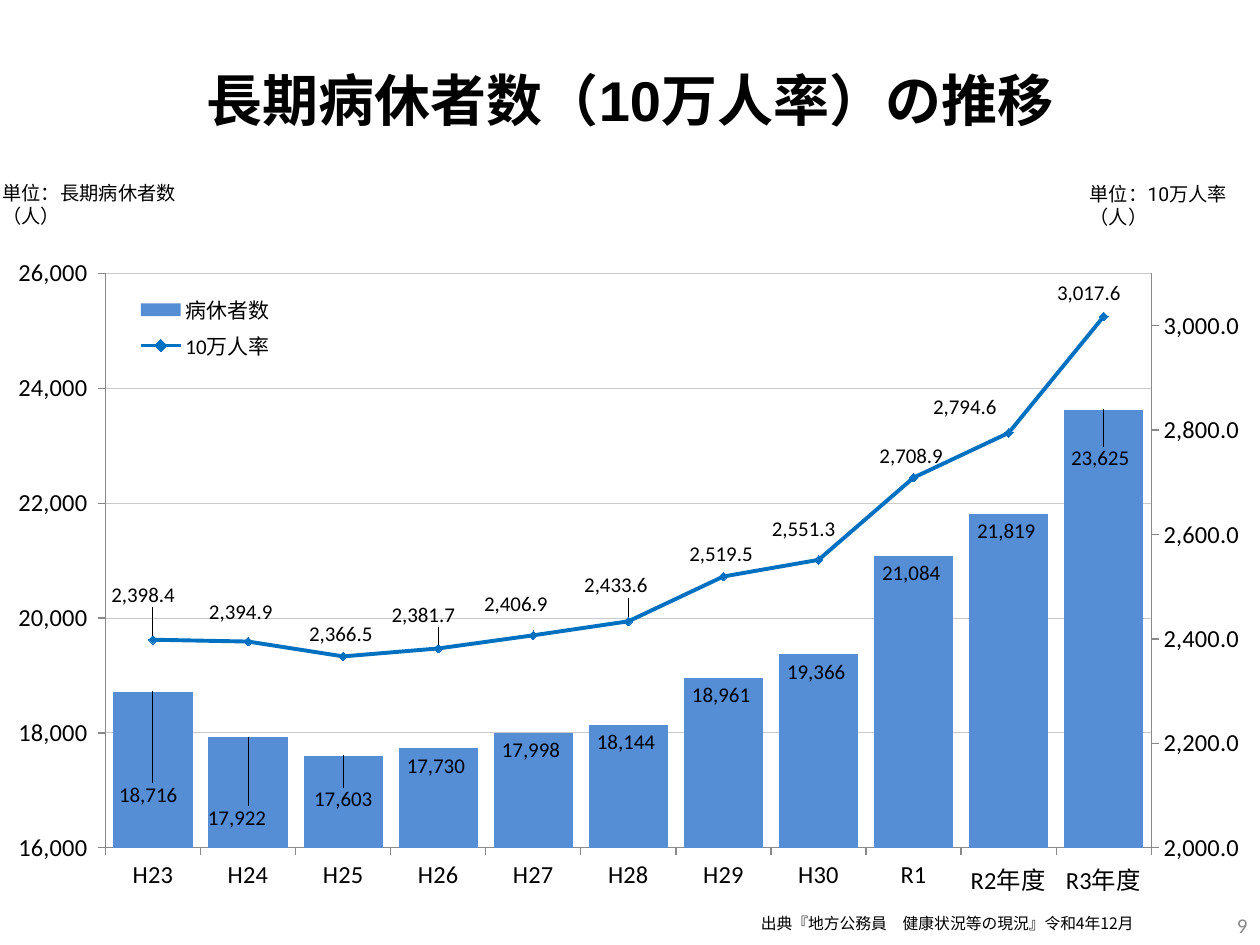
"""Build the slide on long-term sick leave numbers and rates."""
from dataclasses import dataclass

from lxml import etree
from pptx import Presentation
from pptx.chart.data import CategoryChartData
from pptx.dml.color import RGBColor
from pptx.enum.chart import (XL_CHART_TYPE, XL_LABEL_POSITION, XL_LEGEND_POSITION,
                             XL_MARKER_STYLE, XL_TICK_MARK)
from pptx.enum.text import MSO_ANCHOR, PP_ALIGN
from pptx.oxml import parse_xml
from pptx.oxml.ns import qn
from pptx.util import Inches, Pt

CENTER, LEFT, RIGHT = PP_ALIGN.CENTER, PP_ALIGN.LEFT, PP_ALIGN.RIGHT
TOP, MIDDLE = MSO_ANCHOR.TOP, MSO_ANCHOR.MIDDLE
COLUMN = XL_CHART_TYPE.COLUMN_CLUSTERED
INSIDE_END, ABOVE = XL_LABEL_POSITION.INSIDE_END, XL_LABEL_POSITION.ABOVE
LEGEND_RIGHT = XL_LEGEND_POSITION.RIGHT
DIAMOND = XL_MARKER_STYLE.DIAMOND
TICK_OUTSIDE, TICK_NONE = XL_TICK_MARK.OUTSIDE, XL_TICK_MARK.NONE

BLACK, GRAY, GRID, BAR_BLUE, LINE_BLUE = "000000", "898989", "C9C9C9", "558ED5", "0070C0"
CHART_BOX = (0.13, 1.62, 9.75, 5.53)
PLOT_BOX = (0.71, 0.55, 8.33, 4.56)
LEGEND_BOX = (0.87, 0.68, 1.27, 0.6)
CHART_NAMESPACE = "http://schemas.openxmlformats.org/drawingml/2006/chart"
DRAWING_NAMESPACE = "http://schemas.openxmlformats.org/drawingml/2006/main"
CATEGORIES = ("H23", "H24", "H25", "H26", "H27", "H28", "H29", "H30", "R1", "R2年度", "R3年度")
WHOLE, DECIMAL = "#,##0_ ", "#,##0.0_ "

SECOND_AXES = f"""<c:axes xmlns:c="{CHART_NAMESPACE}" xmlns:a="{DRAWING_NAMESPACE}">
<c:catAx><c:axId val="501"/><c:scaling><c:orientation val="minMax"/></c:scaling>
<c:delete val="1"/><c:axPos val="b"/><c:crossAx val="502"/><c:crosses val="autoZero"/></c:catAx>
<c:valAx><c:axId val="502"/><c:scaling><c:orientation val="minMax"/><c:max val="3100"/>
<c:min val="2000"/></c:scaling><c:delete val="0"/><c:axPos val="r"/>
<c:numFmt formatCode="{DECIMAL}" sourceLinked="0"/><c:majorTickMark val="out"/>
<c:minorTickMark val="none"/><c:tickLblPos val="nextTo"/>
<c:spPr><a:ln w="9525"><a:solidFill><a:srgbClr val="{GRAY}"/></a:solidFill></a:ln></c:spPr>
<c:txPr><a:bodyPr/><a:p><a:pPr><a:defRPr sz="1400"/></a:pPr></a:p></c:txPr>
<c:crossAx val="501"/><c:crosses val="max"/><c:crossBetween val="between"/>
<c:majorUnit val="200"/></c:valAx></c:axes>"""


@dataclass
class Caption:
    text: str
    box: tuple
    size: int
    font: str
    color: str = BLACK
    align: PP_ALIGN = LEFT
    anchor: MSO_ANCHOR = TOP
    bold: bool = False


@dataclass
class Measure:
    name: str
    values: tuple
    number_format: str
    position: XL_LABEL_POSITION
    label_shifts: dict


TITLE = Caption("長期病休者数（10万人率）の推移", (0, 0.28, 10, 1.02), 32, "Arial",
                align=CENTER, anchor=MIDDLE, bold=True)
CAPTIONS = (
    Caption("単位：10万人率（人）", (8.55, 1.4, 1.57, 0.29), 11, "Roboto"),
    Caption("単位：長期病休者数（人）", (-0.08, 1.39, 1.82, 0.29), 11, "Roboto"),
    Caption("出典『地方公務員　健康状況等の現況』令和4年12月", (5.94, 7.13, 3.37, 0.4), 9,
            "Noto Sans CJK JP", anchor=MIDDLE),
    Caption("9", (7.67, 7.14, 2.33, 0.4), 12, "Calibri", GRAY, RIGHT, MIDDLE),
)
PEOPLE = Measure(
    "病休者数",
    (18716, 17922, 17603, 17730, 17998, 18144, 18961, 19366, 21084, 21819, 23625),
    WHOLE, INSIDE_END,
    {0: (-0.02, 0.68), 1: (-0.07, 0.5), 2: (0.02, 0.21), 10: (-0.01, 0.25)})
RATE = Measure(
    "10万人率",
    (2398.4, 2394.9, 2366.5, 2381.7, 2406.9, 2433.6, 2519.5, 2551.3, 2708.9, 2794.6, 3017.6),
    DECIMAL, ABOVE,
    {0: (-0.06, -0.18), 1: (-0.04, -0.06), 3: (-0.1, -0.09), 4: (-0.12, -0.07),
     5: (-0.08, -0.11), 7: (-0.1, -0.07), 9: (-0.33, -0.03), 10: (-0.1, -0.01)})


def rgb(value: str) -> RGBColor:
    return RGBColor.from_string(value)


def apply(target, **values) -> None:
    for name, value in values.items():
        setattr(target, name, value)


def chart_element(parent, tag: str, value: str):
    return etree.SubElement(parent, qn(f"c:{tag}"), val=value)


def manual_layout(lengths: tuple, **modes):
    layout = parse_xml(f'<c:layout xmlns:c="{CHART_NAMESPACE}"><c:manualLayout/></c:layout>')
    for name, value in modes.items():
        chart_element(layout[0], name, value)
    for name, length, whole in zip("xywh", lengths, CHART_BOX[2:] * 2):
        chart_element(layout[0], name, str(length / whole))
    return layout


def remove_children(parent, tag: str) -> None:
    for child in parent.findall(qn(tag)):
        parent.remove(child)


def write_caption(shape, caption: Caption) -> None:
    left, top, width, height = map(Inches, caption.box)
    apply(shape, left=left, top=top, width=width, height=height)
    frame = shape.text_frame
    apply(frame, text=caption.text, word_wrap=True, vertical_anchor=caption.anchor)
    paragraph = frame.paragraphs[0]
    paragraph.alignment = caption.align
    font = paragraph.runs[0].font
    apply(font, size=Pt(caption.size), name=caption.font, bold=caption.bold)
    font.color.rgb = rgb(caption.color)


def label_series(series, measure: Measure) -> None:
    labels = series.data_labels
    apply(labels, show_value=True, number_format=measure.number_format,
          number_format_is_linked=False)
    point_labels = [series.points[index].data_label for index in measure.label_shifts]
    for label in (labels, *point_labels):
        label.position = measure.position
        label.font.size = Pt(12)
        label.font.color.rgb = rgb(BLACK)
    for element in series._element.iter(qn("c:dLbl")):
        index_element = element.find(qn("c:idx"))
        layout = manual_layout(measure.label_shifts[int(index_element.get("val"))])
        index_element.addnext(layout)
        layout.addnext(parse_xml(f'<c:numFmt xmlns:c="{CHART_NAMESPACE}" '
                                 f'formatCode="{measure.number_format}" sourceLinked="0"/>'))


def move_rate_to_line(chart) -> None:
    bar_plot = chart.plots[0]._element
    rate = bar_plot.findall(qn("c:ser"))[1]
    remove_children(rate, "c:invertIfNegative")
    line_plot = parse_xml(f'<c:lineChart xmlns:c="{CHART_NAMESPACE}"/>')
    chart_element(line_plot, "grouping", "standard")
    chart_element(line_plot, "varyColors", "0")
    line_plot.append(rate)
    chart_element(line_plot, "marker", "1")
    for axis_id in ("501", "502"):
        chart_element(line_plot, "axId", axis_id)
    bar_plot.addnext(line_plot)
    first_value_axis = chart.value_axis._element
    for axis in reversed(list(parse_xml(SECOND_AXES))):
        first_value_axis.addnext(axis)


def format_axes(chart) -> None:
    value_axis = chart.value_axis
    for axis in (chart.category_axis, value_axis):
        apply(axis, major_tick_mark=TICK_OUTSIDE, minor_tick_mark=TICK_NONE)
        axis.tick_labels.font.size = Pt(14)
        axis.format.line.color.rgb = rgb(GRAY)
        axis.format.line.width = Pt(0.75)
    apply(value_axis, minimum_scale=16000, maximum_scale=26000, major_unit=2000)
    apply(value_axis.tick_labels, number_format=WHOLE, number_format_is_linked=False)
    grid_line = value_axis.major_gridlines.format.line
    grid_line.color.rgb = rgb(GRID)
    grid_line.width = Pt(0.5)


def add_sick_leave_chart(slide) -> None:
    data = CategoryChartData()
    data.categories = CATEGORIES
    for measure in (PEOPLE, RATE):
        data.add_series(measure.name, measure.values, measure.number_format)
    chart = slide.shapes.add_chart(COLUMN, *map(Inches, CHART_BOX), data).chart
    apply(chart, has_title=False, has_legend=True)
    apply(chart.font, size=Pt(10), name="Calibri")
    chart.font.color.rgb = rgb(BLACK)
    format_axes(chart)
    move_rate_to_line(chart)
    bars, lines = chart.plots
    apply(bars, gap_width=20, overlap=-10, vary_by_categories=False)
    people, rate = bars.series[0], lines.series[0]
    apply(rate, smooth=False)
    apply(rate.format.line, width=Pt(2.25))
    apply(rate.marker, style=DIAMOND, size=5)
    rate.format.line.color.rgb = rate.marker.format.line.color.rgb = rgb(LINE_BLUE)
    for fill, color in ((people.format.fill, BAR_BLUE), (rate.marker.format.fill, LINE_BLUE)):
        fill.solid()
        fill.fore_color.rgb = rgb(color)
    label_series(people, PEOPLE)
    label_series(rate, RATE)
    legend = chart.legend
    apply(legend, position=LEGEND_RIGHT, include_in_layout=False)
    legend.font.size = Pt(12)
    remove_children(legend._element, "c:layout")
    legend._element.find(qn("c:legendPos")).addnext(
        manual_layout(LEGEND_BOX, xMode="edge", yMode="edge"))
    plot_area = bars._element.getparent()
    remove_children(plot_area, "c:layout")
    plot_area.insert(0, manual_layout(PLOT_BOX, layoutTarget="inner", xMode="edge", yMode="edge"))


def main() -> None:
    presentation = Presentation()
    apply(presentation, slide_width=Inches(10), slide_height=Inches(7.5))
    slide = presentation.slides.add_slide(presentation.slide_layouts.get_by_name("Title Only"))
    write_caption(slide.shapes.title, TITLE)
    add_sick_leave_chart(slide)
    for caption in CAPTIONS:
        write_caption(slide.shapes.add_textbox(*map(Inches, caption.box)), caption)
    presentation.save("out.pptx")


if __name__ == "__main__":
    main()
